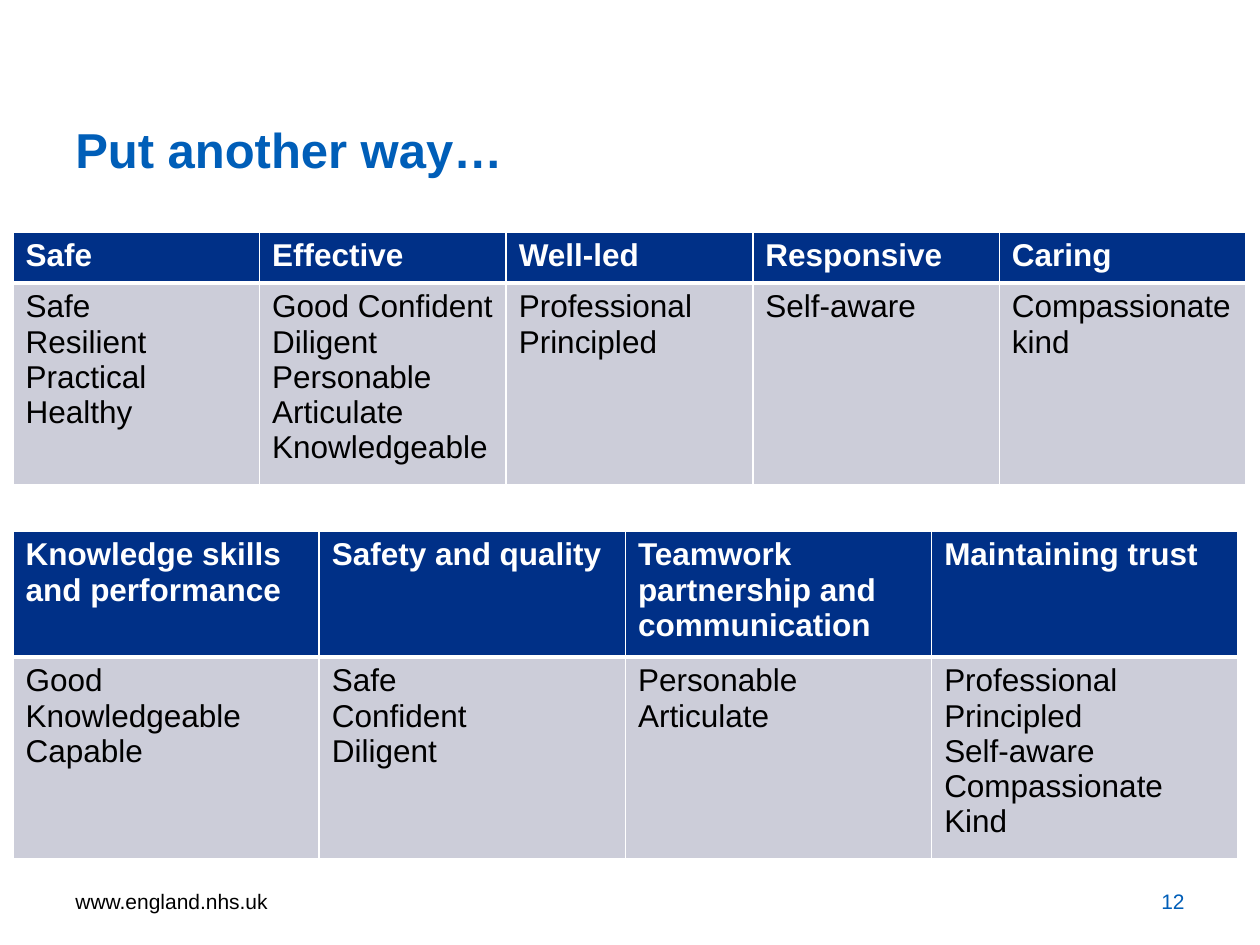
from lxml.etree import SubElement
from pptx import Presentation
from pptx.dml.color import RGBColor
from pptx.enum.text import MSO_ANCHOR as Anchor, PP_ALIGN as Align
from pptx.oxml import parse_xml
from pptx.oxml.ns import nsdecls, qn
from pptx.util import Emu, Pt

PX_PER_INCH = 126
FONT = "Arial"
WHITE, BLACK, BLUE, NAVY, GREY = "FFFFFF", "000000", "005EB8", "003087", "CCCDD9"

DOMAINS = {
    "Safe": ["Safe", "Resilient", "Practical Healthy"],
    "Effective": ["Good Confident", "Diligent", "Personable", "Articulate", "Knowledgeable"],
    "Well-led": ["Professional", "Principled"],
    "Responsive": ["Self-aware"],
    "Caring": ["Compassionate", "kind"],
}
STANDARDS = {
    "Knowledge skills and performance": ["Good", "Knowledgeable", "Capable"],
    "Safety and quality": ["Safe", "Confident", "Diligent"],
    "Teamwork partnership and communication": ["Personable", "Articulate"],
    "Maintaining trust": ["Professional", "Principled", "Self-aware", "Compassionate", "Kind"],
}


def px(length):
    return Emu(round(length * 914400 / PX_PER_INCH))


def colour(value):
    return RGBColor.from_string(value)


def write(frame, lines, size, ink, bold=False, align=Align.LEFT):
    frame.word_wrap = True
    frame.text = "\n".join(lines)
    for para in frame.paragraphs:
        para.alignment = align
        font = para.font
        font.name, font.size, font.bold = FONT, Pt(size), bold
        font.color.rgb = colour(ink)


def add_text(page, box, text, size, ink, bold=False, align=Align.LEFT):
    frame = page.shapes.add_textbox(*map(px, box)).text_frame
    write(frame, [text], size, ink, bold, align)
    frame.vertical_anchor = Anchor.MIDDLE


def set_borders(cell, bottom, top):
    properties = cell._tc.get_or_add_tcPr()
    widths = {"lnL": 1, "lnR": 1, "lnT": top, "lnB": bottom}
    for index, (side, width) in enumerate(widths.items()):
        line = parse_xml(f'<a:{side} {nsdecls("a")} w="{Pt(width)}"/>')
        fill = SubElement(line, qn("a:solidFill"))
        SubElement(fill, qn("a:srgbClr"), val=WHITE)
        properties.insert(index, line)


def add_columns_table(page, box, header_height, columns):
    left, top, width, height = box
    table = page.shapes.add_table(2, len(columns), *map(px, box)).table
    table.rows[0].height = px(header_height)
    table.rows[1].height = px(height - header_height)
    for index, (heading, words) in enumerate(columns.items()):
        table.columns[index].width = px(width / len(columns))
        header, body = table.cell(0, index), table.cell(1, index)
        write(header.text_frame, [heading], 18, WHITE, bold=True)
        write(body.text_frame, words, 18, BLACK)
        set_borders(header, bottom=3, top=1)
        set_borders(body, bottom=1, top=3)
        for cell, shade in ((header, NAVY), (body, GREY)):
            cell.fill.solid()
            cell.fill.fore_color.rgb = colour(shade)


def add_footer(page, box):
    left, top, width, height = box
    part = 294
    add_text(page, (left, top, part, height), "www.england.nhs.uk", 12, BLACK)
    add_text(page, (left + width - part, top, part, height), "12", 12, BLUE, align=Align.RIGHT)


def main():
    deck = Presentation()
    deck.slide_width, deck.slide_height = px(1260), px(945)
    page = deck.slides.add_slide(deck.slide_layouts[6])

    # Title
    add_text(page, (63, 103, 1014, 92), "Put another way…", 28, BLUE, bold=True)
    # Two tables of qualities
    add_columns_table(page, (13, 232, 1233, 239), 51, DOMAINS)
    add_columns_table(page, (13, 531, 1225, 307), 118, STANDARDS)
    # Web address and page number
    add_footer(page, (63, 876, 1134, 50))

    deck.save("out.pptx")


if __name__ == "__main__":
    main()
